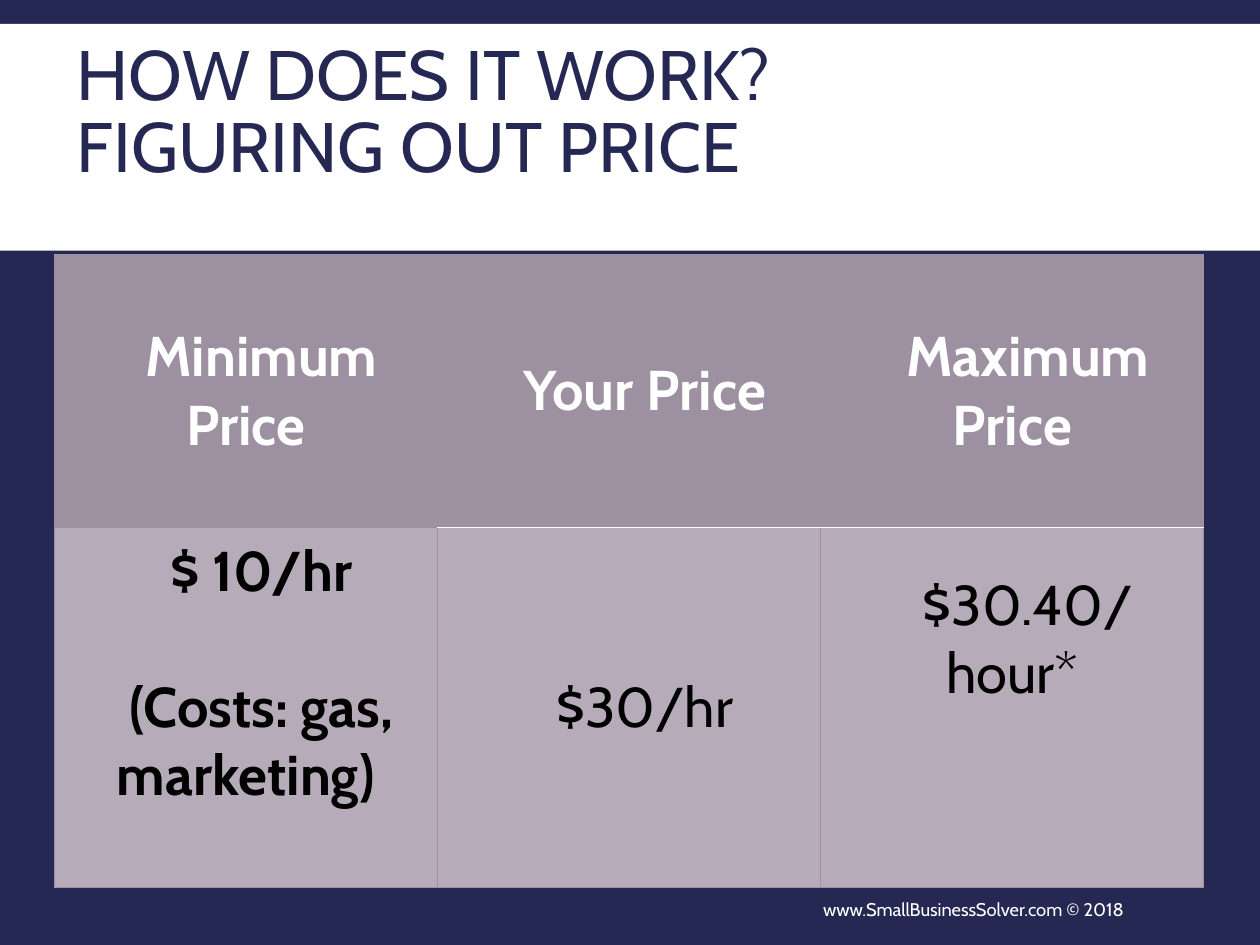
from pptx import Presentation
from pptx.dml.color import RGBColor
from pptx.enum.shapes import MSO_SHAPE
from pptx.enum.text import MSO_ANCHOR, MSO_AUTO_SIZE, PP_ALIGN
from pptx.oxml import parse_xml
from pptx.oxml.ns import nsdecls
from pptx.util import Pt

NAVY, WHITE, BLACK = "242852", "FFFFFF", "000000"
MAUVE, PALE = "9D90A0", "B6ABB8"
LINE = 39  # height of one line of table text


def paint(fill, hue):
    fill.solid()
    fill.fore_color.rgb = RGBColor.from_string(hue)


def style(para, hue, **form):
    para.font.color.rgb = RGBColor.from_string(hue)
    for key, value in {"name": "Cabin", **form}.items():
        setattr(para.font, key, value)


def put(shape, box):
    for key, value in zip(("left", "top", "width", "height"), box):
        setattr(shape, key, Pt(value))


def edge(cell, side, hue, width):
    """Add one cell border; call in the order L, R, T, B."""
    props = cell._tc.get_or_add_tcPr()
    line = parse_xml(
        f'<a:ln{side} {nsdecls("a")} w="{Pt(width)}"><a:solidFill>'
        f'<a:srgbClr val="{hue}"/></a:solidFill></a:ln{side}>')
    props.insert("LRTB".index(side), line)


def head(slide, band, box):
    """Place the title over a white band."""
    rect = slide.shapes.add_shape(MSO_SHAPE.RECTANGLE, *map(Pt, band))
    rect.shadow.inherit = False
    paint(rect.fill, WHITE)
    rect.line.fill.background()
    slide.shapes._spTree.insert(2, rect._element)

    title = slide.shapes.title
    put(title, box)
    frame = title.text_frame
    frame.text = "HOW DOES IT WORK?\vFIGURING OUT PRICE"
    frame.auto_size = MSO_AUTO_SIZE.NONE
    frame.vertical_anchor = MSO_ANCHOR.MIDDLE
    para = frame.paragraphs[0]
    para.alignment, para.line_spacing = PP_ALIGN.LEFT, 0.85
    style(para, NAVY, size=Pt(40))


def write(cell, text, hue, bold, foot):
    form = {"margin_left": Pt(5), "margin_right": Pt(5), "margin_top": 0,
            "margin_bottom": Pt(foot), "vertical_anchor": MSO_ANCHOR.MIDDLE}
    for key, value in form.items():
        setattr(cell, key, value)
    cell.text = text
    for i, para in enumerate(cell.text_frame.paragraphs):
        para.alignment = PP_ALIGN.CENTER
        para._p.get_or_add_pPr().set("indent", str(Pt(18)))
        if i:
            para.space_before = Pt(LINE)
        style(para, hue, size=Pt(32), bold=bold)


def prices(slide, box, rows):
    """Place the price table; each entry is text, bold, space below."""
    data = [
        [("Minimum Price", True, 0), ("Your Price", True, 0),
         ("Maximum Price", True, 0)],
        [("$ 10/hr\n(Costs: gas, marketing)", True, LINE),
         ("$30/hr", False, 0), ("$30.40/hour*", False, 2 * LINE)],
    ]
    table = slide.shapes.add_table(2, 3, *map(Pt, box)).table
    table.first_row = table.horz_banding = False
    for col in table.columns:
        col.width = Pt(box[2] / 3)
    for r, line in enumerate(data):
        table.rows[r].height = Pt(rows[r])
        for c, (text, bold, foot) in enumerate(line):
            cell = table.cell(r, c)
            write(cell, text, BLACK if r else WHITE, bold, foot)
            paint(cell.fill, PALE if r else MAUVE)
            rule = (WHITE, 1) if c else (MAUVE, 0.75)
            plain = (MAUVE, 0.75)
            sides = {"L": plain, "R": plain, "T": rule if r else plain,
                     "B": plain if r else rule}
            for side, look in sides.items():
                edge(cell, side, *look)


def credit(slide, box):
    frame = slide.shapes.add_textbox(*map(Pt, box)).text_frame
    frame.word_wrap = True
    frame.vertical_anchor = MSO_ANCHOR.MIDDLE
    frame.text = "www.SmallBusinessSolver.com © 2018"
    para = frame.paragraphs[0]
    para.alignment = PP_ALIGN.RIGHT
    style(para, WHITE, size=Pt(10.5))


def main():
    deck = Presentation()
    deck.slide_width, deck.slide_height = Pt(720), Pt(540)
    slide = deck.slides.add_slide(deck.slide_layouts[5])
    paint(slide.background.fill, NAVY)
    head(slide, (0, 13.7, 720, 129.6), (36.7, 20.9, 648, 90))
    prices(slide, (31, 145.4, 657, 362), (156, 206))
    credit(slide, (329.8, 505.4, 319.7, 28.8))
    deck.save("out.pptx")


if __name__ == "__main__":
    main()
